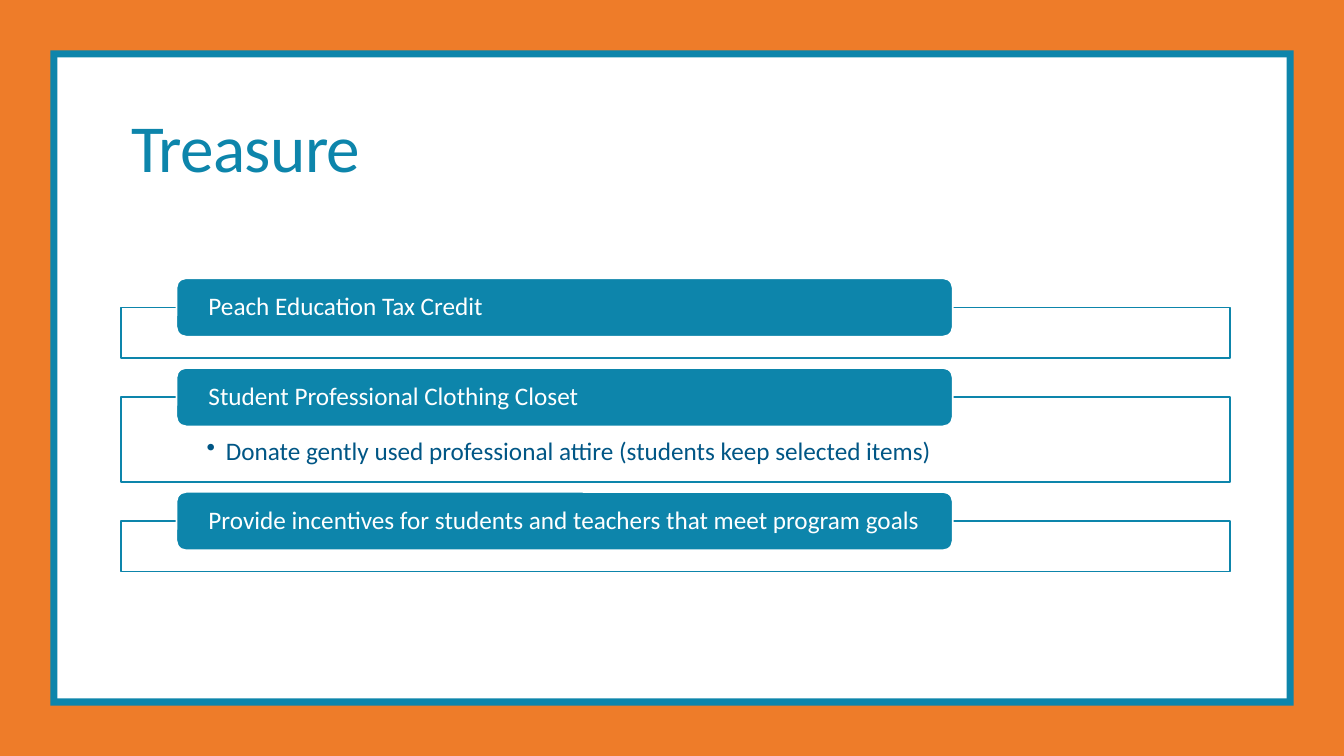
from dataclasses import dataclass

from lxml.etree import SubElement
from pptx import Presentation
from pptx.dml.color import RGBColor
from pptx.enum.shapes import MSO_SHAPE as Shape
from pptx.enum.text import MSO_ANCHOR as Anchor, MSO_AUTO_SIZE as AutoSize, PP_ALIGN as Align
from pptx.oxml.ns import qn
from pptx.util import Inches, Pt


@dataclass(frozen=True)
class Theme:
    orange: RGBColor = RGBColor(0xEE, 0x7C, 0x29)
    teal: RGBColor = RGBColor(0x0D, 0x85, 0xAB)
    navy: RGBColor = RGBColor(0x00, 0x56, 0x85)
    white: RGBColor = RGBColor(0xFF, 0xFF, 0xFF)
    font: str = "Calibri"
    title_size: int = 48
    body_size: int = 18
    outline: float = 1.25


THEME = Theme()
WIDTH, HEIGHT = 13.33, 7.5

# Each topic: heading, detail line, panel height
TOPICS = [
    ("Peach Education Tax Credit", None, 0.5),
    ("Student Professional Clothing Closet",
     "Donate gently used professional attire (students keep selected items)", 0.84),
    ("Provide incentives for students and teachers that meet program goals", None, 0.5),
]
FIRST_TAB_TOP = 2.76
TAB_HEIGHT = 0.58
TOPIC_GAP = 0.1


def add_block(slide, left, top, width, height, fill, line=None, kind=Shape.RECTANGLE):
    block = slide.shapes.add_shape(
        kind, Inches(left), Inches(top), Inches(width), Inches(height))
    block.shadow.inherit = False
    block.fill.solid()
    block.fill.fore_color.rgb = fill
    if line is None:
        block.line.fill.background()
    else:
        block.line.color.rgb = line
        block.line.width = Pt(THEME.outline)
    return block


def write_text(holder, text, *, size, color, insets, anchor, line_spacing=0.9,
               tracking=None, bullet=False):
    frame = holder.text_frame
    frame.word_wrap = True
    frame.auto_size = AutoSize.NONE
    frame.vertical_anchor = anchor
    (frame.margin_left, frame.margin_top,
     frame.margin_right, frame.margin_bottom) = map(Inches, insets)
    paragraph = frame.paragraphs[0]
    paragraph.alignment = Align.LEFT
    paragraph.line_spacing = line_spacing
    if bullet:
        properties = paragraph._p.get_or_add_pPr()
        properties.set("marL", str(Inches(0.19)))
        properties.set("indent", str(Inches(-0.19)))
        SubElement(properties, qn("a:buChar")).set("char", "•")
    run = paragraph.add_run()
    run.text = text
    run.font.name = THEME.font
    run.font.size = Pt(size)
    run.font.color.rgb = color
    if tracking is not None:
        run._r.get_or_add_rPr().set("spc", str(round(tracking * 100)))


def add_frame(slide):
    for margin, color in ((0, THEME.orange), (0.5, THEME.teal), (0.57, THEME.white)):
        add_block(slide, margin, margin, WIDTH - 2 * margin, HEIGHT - 2 * margin, color)


def add_title(slide, text):
    title = slide.shapes.title
    title.left, title.top = Inches(1.2), Inches(0.31)
    title.width, title.height = Inches(11), Inches(1.59)
    write_text(title, text, size=THEME.title_size, color=THEME.teal,
               insets=(0.1, 0.05, 0.1, 0.05), anchor=Anchor.BOTTOM,
               line_spacing=0.85, tracking=-0.5)
    # Bring the title in front of the frame
    slide.shapes._spTree.append(title.element)


def add_topic(slide, tab_top, heading, detail, panel_height):
    """Draw one topic and return the bottom of its panel."""
    panel_top = tab_top + TAB_HEIGHT / 2
    panel = add_block(slide, 1.2, panel_top, 11, panel_height, THEME.white, THEME.teal)
    if detail:
        write_text(panel, detail, size=THEME.body_size, color=THEME.navy,
                   insets=(0.85, 0.41, 0.85, 0.14), anchor=Anchor.TOP, bullet=True)
    tab = add_block(slide, 1.75, tab_top, 7.7, TAB_HEIGHT, THEME.teal, THEME.white,
                    Shape.ROUNDED_RECTANGLE)
    write_text(tab, heading, size=THEME.body_size, color=THEME.white,
               insets=(0.29, 0, 0.29, 0), anchor=Anchor.MIDDLE)
    return panel_top + panel_height


def main():
    deck = Presentation()
    deck.slide_width, deck.slide_height = Inches(WIDTH), Inches(HEIGHT)
    slide = deck.slides.add_slide(deck.slide_layouts.get_by_name("Title Only"))

    # Border and heading
    add_frame(slide)
    add_title(slide, "Treasure")

    # Stacked topics
    tab_top = FIRST_TAB_TOP
    for heading, detail, panel_height in TOPICS:
        tab_top = add_topic(slide, tab_top, heading, detail, panel_height) + TOPIC_GAP

    deck.save("out.pptx")


if __name__ == "__main__":
    main()
